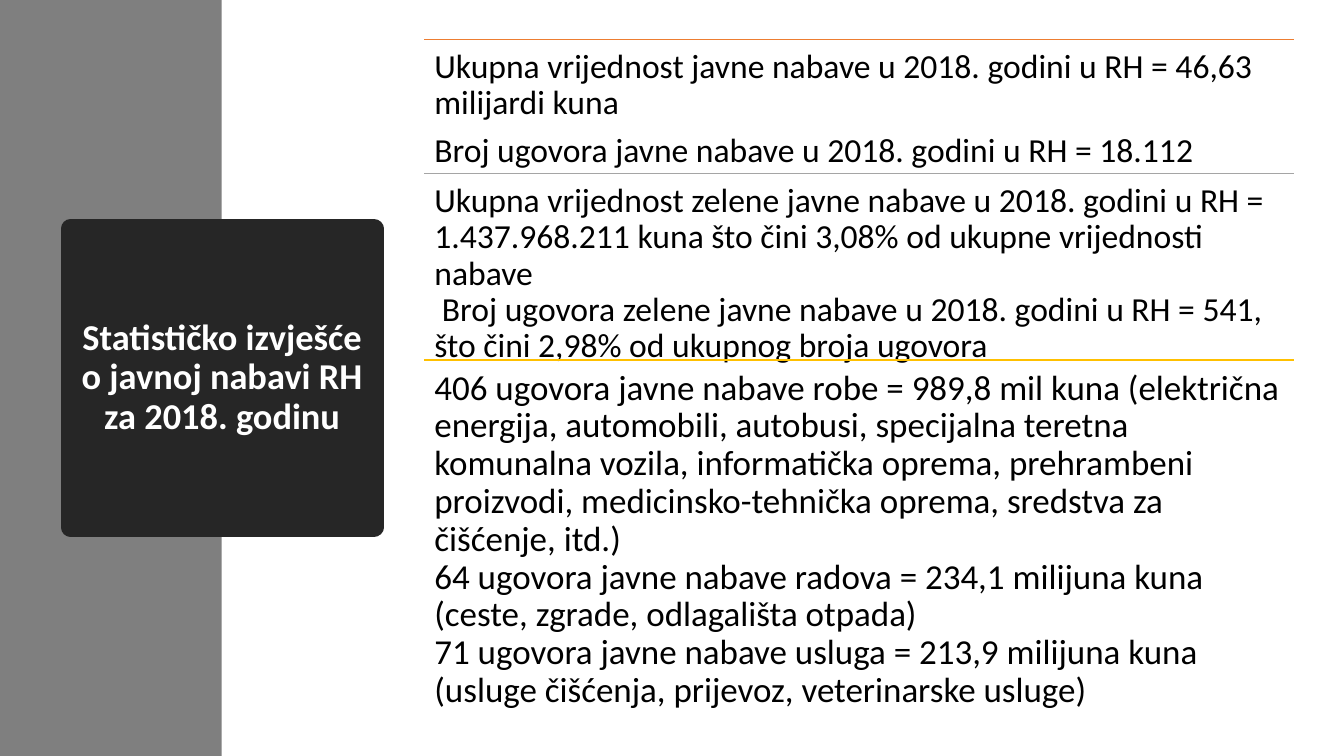
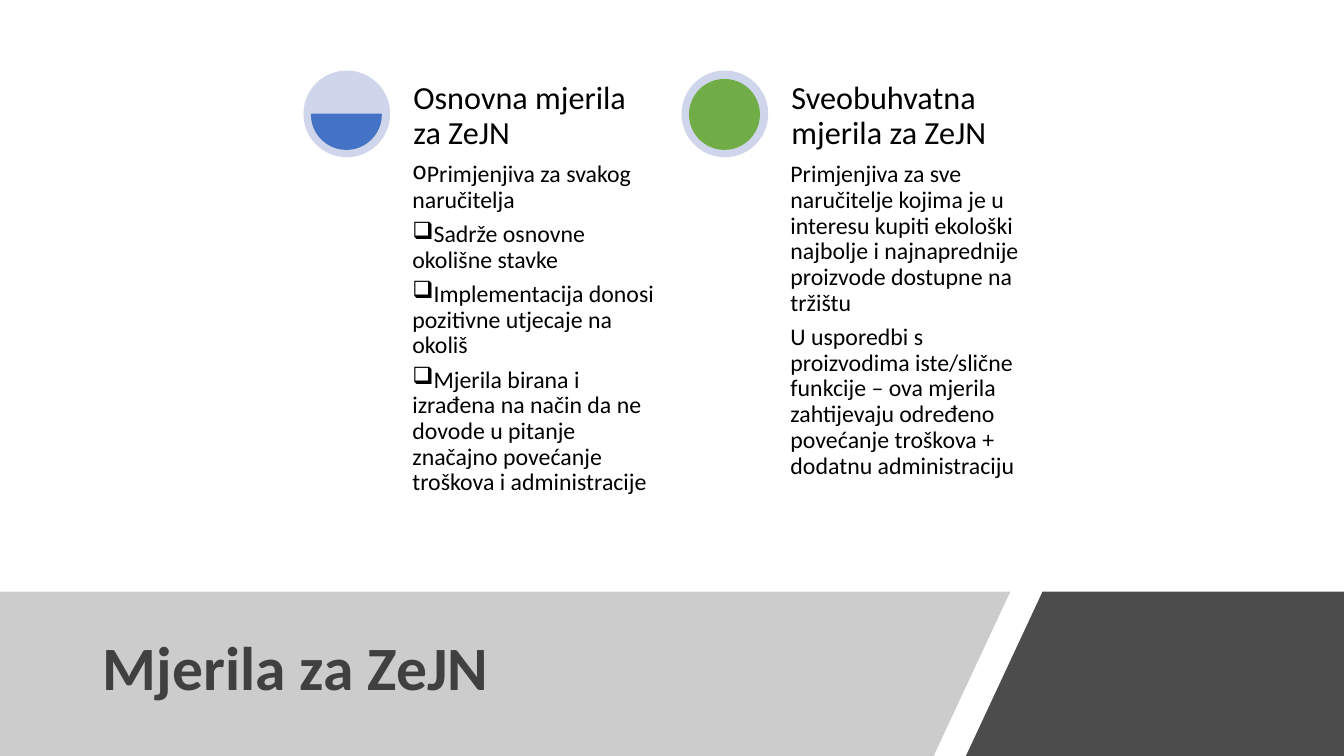
from lxml.etree import SubElement
from pptx import Presentation
from pptx.dml.color import RGBColor
from pptx.enum.shapes import MSO_CONNECTOR, MSO_SHAPE
from pptx.enum.text import MSO_ANCHOR, MSO_AUTO_SIZE, PP_ALIGN
from pptx.oxml.ns import qn
from pptx.util import Pt

PX = 9144
SLIDE_WIDTH, SLIDE_HEIGHT = 1333, 750
FONT = "Calibri"
COLORS = {
    "white": "FFFFFF", "black": "000000", "side": "7F7F7F", "title_box": "262626",
    "title_text": "404040", "band": "808080", "ring": "CFD5EA", "blue": "4472C4",
    "green": "70AD47", "orange": "ED7D31", "gray": "A5A5A5", "gold": "FFC000",
}


def write_text(shape, paragraphs, size, color="black", bold=False, align=PP_ALIGN.LEFT,
               anchor=MSO_ANCHOR.TOP, inset=10, space_after=0, bullets=""):
    frame = shape.text_frame
    frame.word_wrap = True
    frame.auto_size = MSO_AUTO_SIZE.NONE
    frame.vertical_anchor = anchor
    frame.margin_left = frame.margin_right = inset * PX
    frame.margin_top = frame.margin_bottom = inset * PX
    for index, text in enumerate(paragraphs):
        paragraph = frame.paragraphs[0] if index == 0 else frame.add_paragraph()
        paragraph.text = text
        paragraph.alignment = align
        paragraph.line_spacing = 0.9
        paragraph.space_before = Pt(0)
        paragraph.space_after = Pt(space_after)
        if bullets:
            properties = paragraph._p.get_or_add_pPr()
            properties.set("marL", "0")
            properties.set("indent", "0")
            SubElement(properties, qn("a:buChar")).set("char", bullets[index])
        paragraph.font.name = FONT
        paragraph.font.size = Pt(size)
        paragraph.font.bold = bold
        paragraph.font.color.rgb = RGBColor.from_string(COLORS[color])


def paint(shape, fill, line_width=0, opacity=100):
    shape.shadow.inherit = False
    shape.fill.solid()
    shape.fill.fore_color.rgb = RGBColor.from_string(COLORS[fill])
    if opacity < 100:
        color = shape._element.spPr.find(qn("a:solidFill"))[0]
        SubElement(color, qn("a:alpha")).set("val", str(opacity * 1000))
    if line_width:
        shape.line.width = Pt(line_width)
        shape.line.color.rgb = RGBColor.from_string(COLORS[fill])
    else:
        shape.line.fill.background()


presentation = Presentation()
presentation.slide_width = SLIDE_WIDTH * PX
presentation.slide_height = SLIDE_HEIGHT * PX
title_only = presentation.slide_layouts[5]

title_formats = [
    dict(box=(70, 227, 301, 296), text="Statističko izvješće o javnoj nabavi RH za 2018. godinu",
         size=26, color="white", align=PP_ALIGN.CENTER),
    dict(box=(92, 605, 844, 120), text="Mjerila za ZeJN",
         size=44, color="title_text", align=PP_ALIGN.LEFT),
]
slides = []
for title_format in title_formats:
    slide = presentation.slides.add_slide(title_only)
    slide.background.fill.solid()
    slide.background.fill.fore_color.rgb = RGBColor.from_string(COLORS["white"])
    title = slide.shapes.title
    title.left, title.top, title.width, title.height = [
        length * PX for length in title_format["box"]]
    write_text(title, [title_format["text"]], title_format["size"], color=title_format["color"],
               bold=True, align=title_format["align"], anchor=MSO_ANCHOR.MIDDLE)
    slides.append(slide)
statistics_slide, criteria_slide = slides

side_band = statistics_slide.shapes.add_shape(MSO_SHAPE.RECTANGLE, 0, 0, 220 * PX, SLIDE_HEIGHT * PX)
paint(side_band, "side")
paint(statistics_slide.shapes.title, "title_box", line_width=13.75)

sections = [
    (39, 133, "orange", 24, 8.4, [
        "Ukupna vrijednost javne nabave u 2018. godini u RH = 46,63 milijardi kuna",
        "Broj ugovora javne nabave u 2018. godini u RH = 18.112",
    ]),
    (172, 184, "gray", 24, 0, [
        "Ukupna vrijednost zelene javne nabave u 2018. godini u RH = 1.437.968.211 kuna "
        "što čini 3,08% od ukupne vrijednosti nabave",
        " Broj ugovora zelene javne nabave u 2018. godini u RH = 541, "
        "što čini 2,98% od ukupnog broja ugovora",
    ]),
    (357, 350, "gold", 25, 0, [
        "406 ugovora javne nabave robe = 989,8 mil kuna (električna energija, automobili, "
        "autobusi, specijalna teretna komunalna vozila, informatička oprema, prehrambeni "
        "proizvodi, medicinsko-tehnička oprema, sredstva za čišćenje, itd.)",
        "64 ugovora javne nabave radova = 234,1 milijuna kuna (ceste, zgrade, odlagališta otpada)",
        "71 ugovora javne nabave usluga = 213,9 milijuna kuna "
        "(usluge čišćenja, prijevoz, veterinarske usluge)",
    ]),
]
section_left, section_width = 421, 862
for top, height, color, size, space_after, paragraphs in sections:
    rule = statistics_slide.shapes.add_connector(
        MSO_CONNECTOR.STRAIGHT, section_left * PX, top * PX,
        (section_left + section_width) * PX, top * PX)
    rule.line.width = Pt(1)
    rule.line.color.rgb = RGBColor.from_string(COLORS[color])
    SubElement(rule._element.spPr, qn("a:effectLst"))
    section = statistics_slide.shapes.add_textbox(
        section_left * PX, top * PX, section_width * PX, height * PX)
    write_text(section, paragraphs, size, space_after=space_after)

band_top = 587
bands = [
    ("band", 40, [(0, band_top), (1002, band_top), (926, SLIDE_HEIGHT), (0, SLIDE_HEIGHT)]),
    ("black", 70, [(1034, band_top), (SLIDE_WIDTH, band_top),
                   (SLIDE_WIDTH, SLIDE_HEIGHT), (958, SLIDE_HEIGHT)]),
]
for color, opacity, points in bands:
    builder = criteria_slide.shapes.build_freeform(*points[0], scale=PX)
    builder.add_line_segments(points[1:], close=True)
    paint(builder.convert_to_shape(), color, opacity=opacity)

criteria = [
    ("Osnovna mjerila za ZeJN", MSO_SHAPE.CHORD, "blue", "o❑❑❑", [
        "Primjenjiva za svakog naručitelja",
        "Sadrže osnovne okolišne stavke",
        "Implementacija donosi pozitivne utjecaje na okoliš",
        "Mjerila birana i izrađena na način da ne dovode u pitanje značajno povećanje "
        "troškova i administracije",
    ]),
    ("Sveobuhvatna mjerila za ZeJN", MSO_SHAPE.OVAL, "green", "", [
        "Primjenjiva za sve naručitelje kojima je u interesu kupiti ekološki najbolje "
        "i najnaprednije proizvode dostupne na tržištu",
        "U usporedbi s proizvodima iste/slične funkcije – ova mjerila zahtijevaju određeno "
        "povećanje troškova + dodatnu administraciju",
    ]),
]
ring_top, ring_size, disc_size = 70, 86, 69
for index, (heading, disc_kind, color, bullets, paragraphs) in enumerate(criteria):
    left = 301 + index * 375
    ring = criteria_slide.shapes.add_shape(
        MSO_SHAPE.OVAL, left * PX, ring_top * PX, ring_size * PX, ring_size * PX)
    paint(ring, "ring")
    disc = criteria_slide.shapes.add_shape(
        disc_kind, (left + 8) * PX, (ring_top + 9) * PX, disc_size * PX, disc_size * PX)
    if disc_kind == MSO_SHAPE.CHORD:
        disc.adjustments[0] = 0
        disc.adjustments[1] = 108
    paint(disc, color, line_width=1)
    text_left, text_width = (left + 103) * PX, 253 * PX
    body = criteria_slide.shapes.add_textbox(
        text_left, (ring_top + ring_size) * PX, text_width, 361 * PX)
    write_text(body, paragraphs, 17, inset=5, space_after=6, bullets=bullets)
    heading_box = criteria_slide.shapes.add_textbox(
        text_left, ring_top * PX, text_width, ring_size * PX)
    write_text(heading_box, [heading], 23, anchor=MSO_ANCHOR.BOTTOM, inset=6)

for slide in slides:
    slide.shapes._spTree.append(slide.shapes.title._element)

presentation.save("out.pptx")
